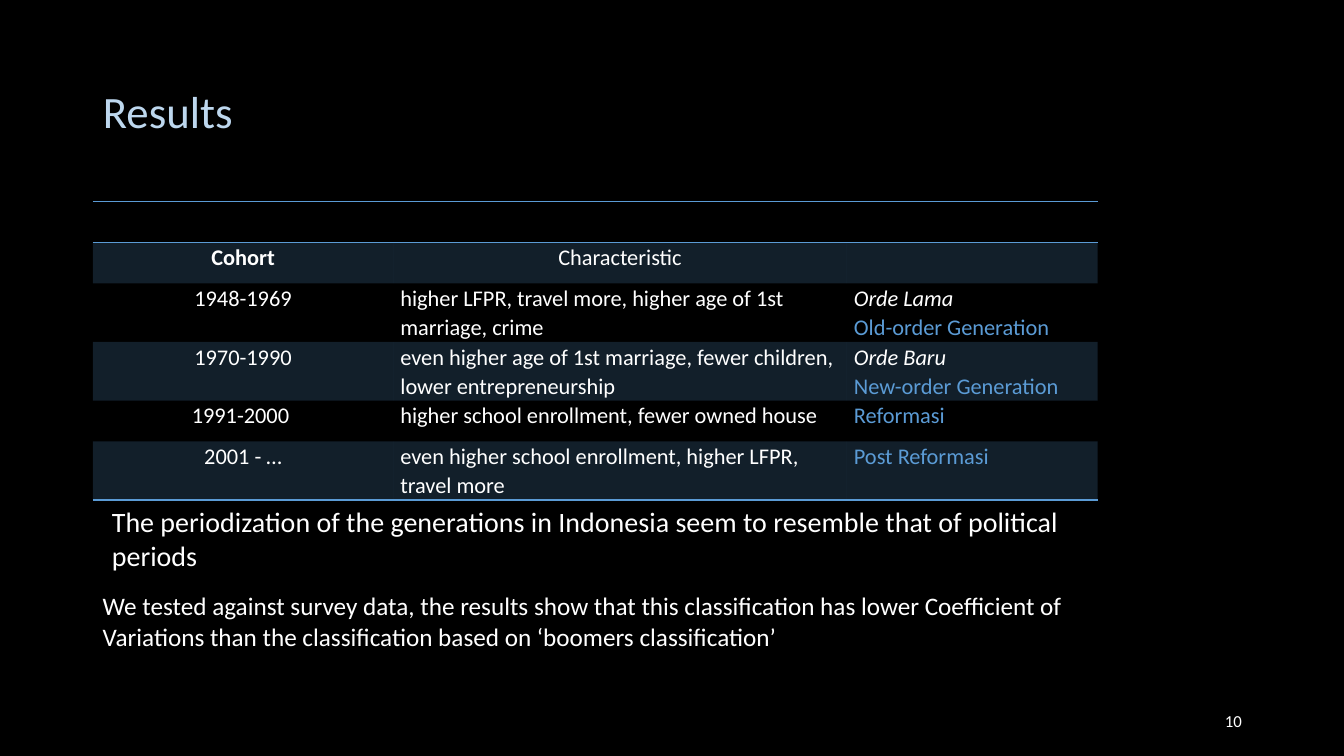
"""Build the results slide with the table of Indonesian generations."""
from dataclasses import dataclass

from lxml import etree
from pptx import Presentation
from pptx.dml.color import RGBColor
from pptx.enum.text import MSO_ANCHOR, MSO_AUTO_SIZE, PP_ALIGN
from pptx.oxml.ns import qn
from pptx.util import Cm, Pt

LEFT, CENTER, RIGHT = PP_ALIGN.LEFT, PP_ALIGN.CENTER, PP_ALIGN.RIGHT
TOP, MIDDLE = MSO_ANCHOR.TOP, MSO_ANCHOR.MIDDLE
NO_AUTOFIT = MSO_AUTO_SIZE.NONE
TITLE_ONLY = 5
PLAIN_TABLE_STYLE = "{2D5ABB26-0587-4C30-8999-92F81FD0307C}"


@dataclass(frozen=True)
class Theme:
    """Colours and type sizes of the slide."""
    font: str = "Calibri"
    background: str = "000000"
    text: str = "FFFFFF"
    title: str = "BDD7EE"
    accent: str = "5B9BD5"
    band_opacity: int = 20
    title_size: int = 32
    finding_size: int = 20
    body_size: int = 18
    table_size: int = 16
    number_size: int = 12


THEME = Theme()
TITLE = "Results"
HEADER = ("Cohort", "Characteristic")
COHORTS = [
    ("1948-1969", "higher LFPR, travel more, higher age of 1st marriage, crime",
     "Orde Lama", "Old-order Generation"),
    ("1970-1990", "even higher age of 1st marriage, fewer children, lower entrepreneurship",
     "Orde Baru", "New-order Generation"),
    ("1991-2000 ", "higher school enrollment, fewer owned house", None, "Reformasi"),
    ("2001 - …", "even higher school enrollment, higher LFPR, travel more",
     None, "Post Reformasi"),
]
MARGIN = 2.34
COLUMN_WIDTHS = (7.57, 11.43, 6.32)
ROW_HEIGHT = 1.03
TABLE_TOP = 5.08
TITLE_BOX = (MARGIN, 1.02, 29.21, 3.68)
TEXT_BOXES = [
    ("10", (23.93, 17.65, 7.62, 1.02), THEME.number_size, RIGHT, MIDDLE),
    ("We tested against survey data, the results show that this classification has lower "
     "Coefficient of Variations than the classification based on ‘boomers classification’",
     (MARGIN, 14.76, 24.84, 1.8), THEME.body_size, LEFT, TOP),
    ("The periodization of the generations in Indonesia seem to resemble that of political "
     "periods", (2.57, 12.6, 24.84, 1.96), THEME.finding_size, LEFT, TOP),
]


def write(paragraph, text, size, color=THEME.text, align=LEFT, spacing=1.0,
          bold=False, italic=False):
    """Add one formatted run to a paragraph."""
    paragraph.alignment = align
    paragraph.line_spacing = spacing
    run = paragraph.add_run()
    run.text = text
    run.font.name = THEME.font
    run.font.size = Pt(size)
    run.font.bold = bold
    run.font.italic = italic
    run.font.color.rgb = RGBColor.from_string(color)


def write_cell(cell, lines, align=LEFT):
    """Fill a cell with lines of (text, formatting)."""
    cell.margin_left = cell.margin_right = Cm(0.18)
    cell.margin_top = cell.margin_bottom = 0
    for index, (text, style) in enumerate(lines):
        frame = cell.text_frame
        paragraph = frame.add_paragraph() if index else frame.paragraphs[0]
        write(paragraph, text, THEME.table_size, align=align, spacing=1.07, **style)


def rule_cell(cell, sides):
    """Draw accent lines on the named sides of a cell."""
    properties = cell._tc.get_or_add_tcPr()
    for side in sides:
        line = etree.SubElement(properties, qn(f"a:ln{side}"), w=str(Pt(1)))
        fill = etree.SubElement(line, qn("a:solidFill"))
        etree.SubElement(fill, qn("a:srgbClr"), val=THEME.accent)


def band_cell(cell):
    """Give a cell the translucent band colour."""
    cell.fill.solid()
    cell.fill.fore_color.rgb = RGBColor.from_string(THEME.accent)
    color = cell._tc.tcPr.find(f".//{qn('a:solidFill')}[last()]")
    color = cell._tc.tcPr.findall(qn("a:solidFill"))[0][0]
    etree.SubElement(color, qn("a:alpha"), val=str(THEME.band_opacity * 1000))


def add_cohort_table(slide):
    """Add the cohort table with its ruled top row and shaded bands."""
    row_count = len(COHORTS) + 2
    frame = slide.shapes.add_table(
        row_count, len(COLUMN_WIDTHS), Cm(MARGIN), Cm(TABLE_TOP),
        Cm(sum(COLUMN_WIDTHS)), Cm(ROW_HEIGHT * row_count))
    table = frame.table
    table.first_row = table.horz_banding = False
    table._tbl.tblPr.find(qn("a:tableStyleId")).text = PLAIN_TABLE_STYLE
    for column, width in zip(table.columns, COLUMN_WIDTHS):
        column.width = Cm(width)
    for index, row in enumerate(table.rows):
        row.height = Cm(ROW_HEIGHT)
        sides = {0: "TB", row_count - 1: "B"}.get(index, "")
        for cell in row.cells:
            rule_cell(cell, sides)
            if index % 2:
                band_cell(cell)
            else:
                cell.fill.background()
    table.cell(0, 0).merge(table.cell(0, len(COLUMN_WIDTHS) - 1))

    for column, text in enumerate(HEADER):
        write_cell(table.cell(1, column), [(text, {"bold": column == 0})], CENTER)
    for index, (years, traits, period, generation) in enumerate(COHORTS, start=2):
        names = [(period, {"italic": True})] if period else []
        names.append((generation, {"color": THEME.accent}))
        write_cell(table.cell(index, 0), [(years, {})], CENTER)
        write_cell(table.cell(index, 1), [(traits, {})])
        write_cell(table.cell(index, 2), names)


def main():
    """Assemble and save the presentation."""
    presentation = Presentation()
    presentation.slide_width, presentation.slide_height = Cm(33.87), Cm(19.05)
    slide = presentation.slides.add_slide(presentation.slide_layouts[TITLE_ONLY])
    slide.background.fill.solid()
    slide.background.fill.fore_color.rgb = RGBColor.from_string(THEME.background)

    title = slide.shapes.title
    title.left, title.top, title.width, title.height = map(Cm, TITLE_BOX)
    title.text_frame.auto_size = NO_AUTOFIT
    title.text_frame.vertical_anchor = MIDDLE
    write(title.text_frame.paragraphs[0], TITLE, THEME.title_size, THEME.title, spacing=0.9)

    add_cohort_table(slide)
    for text, box, size, align, anchor in TEXT_BOXES:
        frame = slide.shapes.add_textbox(*map(Cm, box)).text_frame
        frame.word_wrap = True
        frame.vertical_anchor = anchor
        write(frame.paragraphs[0], text, size, align=align)
    presentation.save("out.pptx")


if __name__ == "__main__":
    main()
